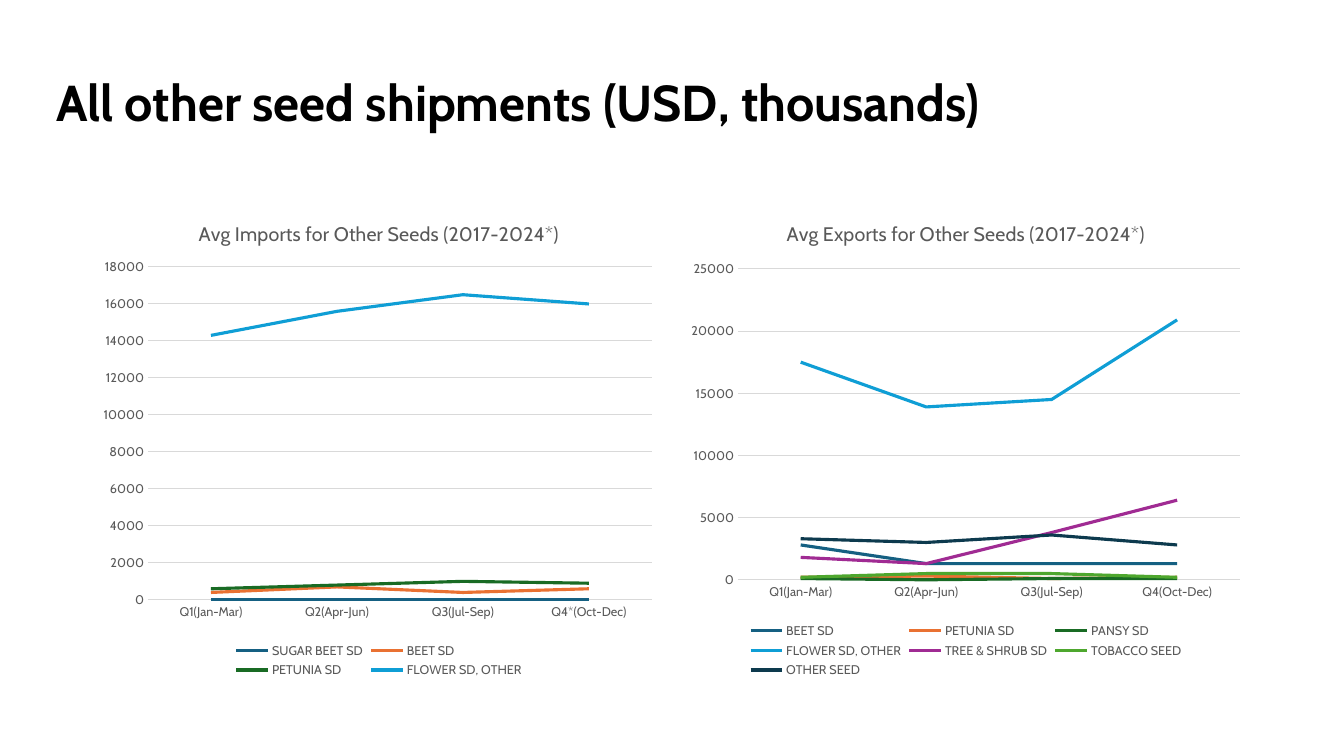
from lxml import etree
from pptx import Presentation
from pptx.chart.data import CategoryChartData
from pptx.dml.color import RGBColor
from pptx.enum.chart import XL_CHART_TYPE, XL_LEGEND_POSITION, XL_MARKER_STYLE, XL_TICK_MARK
from pptx.enum.text import MSO_ANCHOR, PP_ALIGN
from pptx.oxml.ns import qn
from pptx.util import Pt

PX = 914400 / 100.8
FONT = "Cabin"
LINE = XL_CHART_TYPE.LINE
BOTTOM = XL_LEGEND_POSITION.BOTTOM
NO_MARKER = XL_MARKER_STYLE.NONE
NO_TICK = XL_TICK_MARK.NONE
MIDDLE = MSO_ANCHOR.MIDDLE
LEFT = PP_ALIGN.LEFT

BLACK = RGBColor(0x00, 0x00, 0x00)
GRAY = RGBColor(0x59, 0x59, 0x59)
GRID = RGBColor(0xD9, 0xD9, 0xD9)
BLUE = RGBColor(0x15, 0x60, 0x82)
ORANGE = RGBColor(0xE9, 0x71, 0x32)
GREEN = RGBColor(0x19, 0x6B, 0x24)
SKY = RGBColor(0x0F, 0x9E, 0xD5)
PURPLE = RGBColor(0xA0, 0x2B, 0x93)
LIME = RGBColor(0x4E, 0xA7, 0x2E)
NAVY = RGBColor(0x0D, 0x3A, 0x4E)

CHART_TOP, CHART_WIDTH, CHART_HEIGHT = 202, 572, 480
# plot: left, top, width and height in px on the slide
CHARTS = [
    {"title": "Avg Exports for Other Seeds (2017-2024*)",
     "left": 680, "plot": (738, 269, 502, 311), "maximum": 25000, "step": 5000,
     "quarters": ["Q1(Jan-Mar)", "Q2(Apr-Jun)", "Q3(Jul-Sep)", "Q4(Oct-Dec)"],
     "seeds": [("BEET SD", BLUE, (2800, 1300, 1300, 1300)),
               ("PETUNIA SD", ORANGE, (200, 300, 100, 200)),
               ("PANSY SD", GREEN, (100, 0, 100, 100)),
               ("FLOWER SD, OTHER", SKY, (17500, 13900, 14500, 20900)),
               ("TREE & SHRUB SD", PURPLE, (1800, 1300, 3800, 6400)),
               ("TOBACCO SEED", LIME, (200, 500, 500, 200)),
               ("OTHER SEED", NAVY, (3300, 3000, 3600, 2800))]},
    {"title": "Avg Imports for Other Seeds (2017-2024*)",
     "left": 93, "plot": (148, 267, 504, 333), "maximum": 18000, "step": 2000,
     "quarters": ["Q1(Jan-Mar)", "Q2(Apr-Jun)", "Q3(Jul-Sep)", "Q4*(Oct-Dec)"],
     "seeds": [("SUGAR BEET SD", BLUE, (0, 0, 0, 0)),
               ("BEET SD", ORANGE, (400, 700, 400, 600)),
               ("PETUNIA SD", GREEN, (600, 800, 1000, 900)),
               ("FLOWER SD, OTHER", SKY, (14300, 15600, 16500, 16000))]},
]


def px(*lengths):
    """Turn pixel lengths into EMU."""
    return [round(length * PX) for length in lengths]


def write(text_frame, text, size, color, bold=False, align=None, spacing=None):
    paragraph = text_frame.paragraphs[0]
    paragraph.alignment = align
    paragraph.line_spacing = spacing
    run = paragraph.add_run()
    run.text = text
    run.font.name = FONT
    run.font.size = Pt(size)
    run.font.bold = bold
    run.font.color.rgb = color


presentation = Presentation()
presentation.slide_width, presentation.slide_height = px(1344, 756)
slide = presentation.slides.add_slide(presentation.slide_layouts[5])

title = slide.shapes.title
title.left, title.top, title.width, title.height = px(46, 32, 1159, 146)
title.text_frame.word_wrap = True
title.text_frame.vertical_anchor = MIDDLE
write(title.text_frame, "All other seed shipments (USD, thousands)", 36, BLACK,
      bold=True, align=LEFT, spacing=0.9)

for panel in CHARTS:
    data = CategoryChartData(number_format="General")
    data.categories = panel["quarters"]
    for name, color, values in panel["seeds"]:
        data.add_series(name, values)
    frame = slide.shapes.add_chart(
        LINE, *px(panel["left"], CHART_TOP, CHART_WIDTH, CHART_HEIGHT), data)
    chart = frame.chart
    chart.font.name = FONT
    chart.font.size = Pt(10)
    chart.has_title = True
    write(chart.chart_title.text_frame, panel["title"], 14, GRAY)
    chart.chart_title.include_in_layout = False
    chart.has_legend = True
    chart.legend.position = BOTTOM
    chart.legend.include_in_layout = False

    quarter_axis, value_axis = chart.category_axis, chart.value_axis
    for part in (quarter_axis.tick_labels, value_axis.tick_labels, chart.legend):
        part.font.name = FONT
        part.font.size = Pt(9)
        part.font.color.rgb = GRAY
    for axis in (quarter_axis, value_axis):
        axis.major_tick_mark = NO_TICK
        axis.minor_tick_mark = NO_TICK
    value_axis.minimum_scale = 0
    value_axis.maximum_scale = panel["maximum"]
    value_axis.major_unit = panel["step"]
    value_axis.format.line.fill.background()
    value_axis.has_major_gridlines = True
    for line in (quarter_axis.format.line, value_axis.major_gridlines.format.line):
        line.color.rgb = GRID
        line.width = Pt(0.75)

    plot = chart.plots[0]
    plot.vary_by_categories = False
    for series, (name, color, values) in zip(plot.series, panel["seeds"]):
        series.smooth = False
        series.marker.style = NO_MARKER
        series.format.line.color.rgb = color
        series.format.line.width = Pt(2.25)

    # Fix the inner plot area as fractions of the chart
    plot_area = chart.element.find(".//" + qn("c:plotArea"))
    for layout in plot_area.findall(qn("c:layout")):
        plot_area.remove(layout)
    layout = etree.Element(qn("c:layout"))
    plot_area.insert(0, layout)
    manual = etree.SubElement(layout, qn("c:manualLayout"))
    left, top, width, height = panel["plot"]
    settings = [("layoutTarget", "inner"), ("xMode", "edge"), ("yMode", "edge"),
                ("x", (left - panel["left"]) / CHART_WIDTH),
                ("y", (top - CHART_TOP) / CHART_HEIGHT),
                ("w", width / CHART_WIDTH), ("h", height / CHART_HEIGHT)]
    for tag, value in settings:
        etree.SubElement(manual, qn("c:" + tag)).set("val", str(value))

presentation.save("out.pptx")
